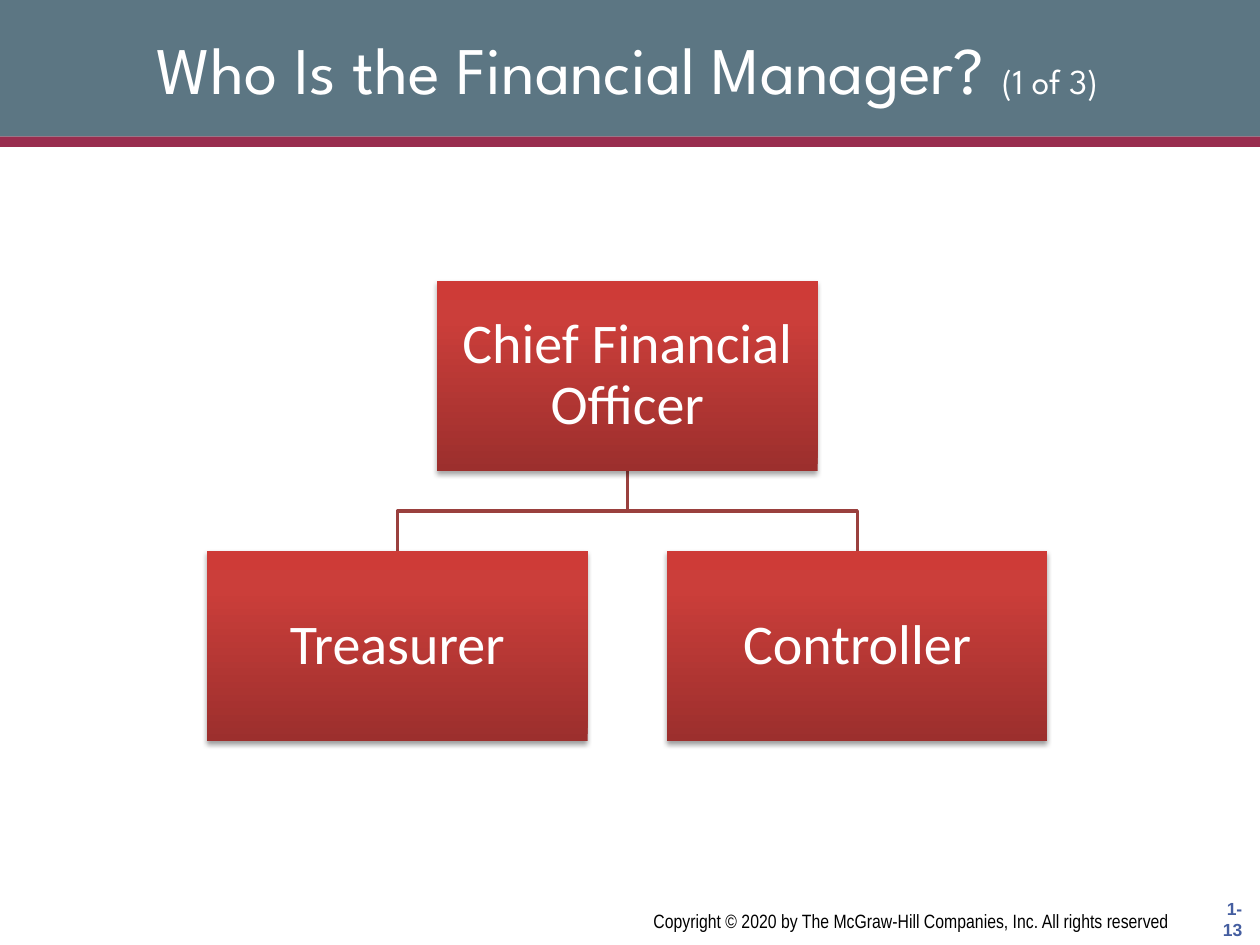
from copy import deepcopy
from dataclasses import dataclass

from lxml.etree import SubElement
from pptx import Presentation
from pptx.dml.color import RGBColor
from pptx.enum.shapes import MSO_SHAPE
from pptx.enum.text import MSO_ANCHOR, MSO_AUTO_SIZE, PP_ALIGN
from pptx.oxml.ns import qn
from pptx.util import Pt

BOX_WIDTH, BOX_HEIGHT = 217.4, 108.7
BOX_GRADIENT = [(0, "9C2F2D"), (0.8, "CB3E3A"), (1, "CE3B37")]


@dataclass
class Role:
    title: str
    center: float
    top: float
    shadow_alpha: int = 38
    shadow_distance: float = 1.6

    @property
    def bottom(self) -> float:
        return self.top + BOX_HEIGHT


def color(hex_code: str) -> RGBColor:
    return RGBColor.from_string(hex_code)


def set_font(font, name: str, size: float, hex_code: str, bold: bool = False) -> None:
    font.name, font.size, font.bold = name, Pt(size), bold
    font.color.rgb = color(hex_code)


def add_rect(slide, left: float, top: float, width: float, height: float):
    rect = slide.shapes.add_shape(
        MSO_SHAPE.RECTANGLE, Pt(left), Pt(top), Pt(width), Pt(height))
    rect.shadow.inherit = False
    rect.line.fill.background()
    return rect


def add_band(slide, top: float, height: float, hex_code: str) -> None:
    band = add_rect(slide, 0, top, 720, height)
    band.fill.solid()
    band.fill.fore_color.rgb = color(hex_code)


def add_footer(slide, text: str, left: float, top: float, width: float, height: float,
               wrap: bool, anchor: MSO_ANCHOR):
    frame = slide.shapes.add_textbox(Pt(left), Pt(top), Pt(width), Pt(height)).text_frame
    frame.word_wrap, frame.vertical_anchor = wrap, anchor
    paragraph = frame.paragraphs[0]
    paragraph.text, paragraph.alignment = text, PP_ALIGN.RIGHT
    return paragraph


def add_gradient(shape) -> None:
    shape.fill.gradient()
    shape.fill.gradient_angle = 90
    stop_list = shape.fill._fill._gradFill.find(qn("a:gsLst"))
    stop_list.append(deepcopy(stop_list[-1]))
    for stop, (position, hex_code) in zip(shape.fill.gradient_stops, BOX_GRADIENT):
        stop.position, stop.color.rgb = position, color(hex_code)


def add_shadow(shape, distance: float, alpha: int) -> None:
    effects = shape._element.spPr.find(qn("a:effectLst"))
    shadow = SubElement(effects, qn("a:outerShdw"), blurRad=str(Pt(3.1)),
                        dist=str(Pt(distance)), dir="5400000", rotWithShape="0")
    black = SubElement(shadow, qn("a:srgbClr"), val="000000")
    SubElement(black, qn("a:alpha"), val=str(alpha * 1000))


def add_role(slide, role: Role) -> None:
    box = add_rect(slide, role.center - BOX_WIDTH / 2, role.top, BOX_WIDTH, BOX_HEIGHT)
    add_gradient(box)
    add_shadow(box, role.shadow_distance, role.shadow_alpha)
    frame = box.text_frame
    frame.margin_left = frame.margin_right = Pt(1.6)
    frame.margin_top = frame.margin_bottom = Pt(1.6)
    frame.word_wrap, frame.vertical_anchor = True, MSO_ANCHOR.MIDDLE
    paragraph = frame.paragraphs[0]
    paragraph.text, paragraph.alignment = role.title, PP_ALIGN.CENTER
    paragraph.line_spacing = 0.9
    set_font(paragraph.font, "Calibri", 32, "FFFFFF")


def add_branch(slide, parent: Role, child: Role) -> None:
    middle = (parent.bottom + child.top) / 2
    builder = slide.shapes.build_freeform(Pt(parent.center), Pt(parent.bottom))
    corners = [(parent.center, middle), (child.center, middle), (child.center, child.top)]
    builder.add_line_segments([(Pt(x), Pt(y)) for x, y in corners], close=False)
    branch = builder.convert_to_shape()
    branch.shadow.inherit = False
    branch.fill.background()
    branch.line.color.rgb, branch.line.width = color("9A403E"), Pt(2)


def add_title(slide) -> None:
    title = slide.shapes.title
    title.left, title.top, title.width, title.height = Pt(18), Pt(5.8), Pt(681), Pt(66)
    frame = title.text_frame
    frame.auto_size, frame.vertical_anchor = MSO_AUTO_SIZE.NONE, MSO_ANCHOR.MIDDLE
    paragraph = frame.paragraphs[0]
    paragraph.alignment = PP_ALIGN.CENTER
    for text, size in [("Who Is the Financial Manager? ", 38), ("(1 of 3)", 20)]:
        run = paragraph.add_run()
        run.text = text
        set_font(run.font, "League Spartan", size, "FFFFFF")
    # Bring the title in front of the header band
    slide.shapes._spTree.append(title._element)


def main() -> None:
    presentation = Presentation()
    presentation.slide_width, presentation.slide_height = Pt(720), Pt(540)
    slide = presentation.slides.add_slide(presentation.slide_layouts[5])

    # Header
    add_band(slide, 78, 6, "992D4F")
    add_band(slide, 0, 78, "5C7683")
    add_title(slide)

    # Footer
    page_number = add_footer(slide, "1- 13", 681, 510, 36, 30, False, MSO_ANCHOR.MIDDLE)
    set_font(page_number.font, "Arial", 10, "455EA0", bold=True)
    rights = add_footer(
        slide, "Copyright © 2020 by The McGraw-Hill Companies, Inc. All rights reserved ",
        257.8, 516, 420, 21, True, MSO_ANCHOR.TOP)
    set_font(rights.font, "Arial Narrow", 11, "000000")

    # Organisation chart
    center, offset = 358.5, 131.4
    officer = Role("Chief Financial Officer", center, 160.5, 35, 1.8)
    reports = [Role("Treasurer", center - offset, 314.8),
               Role("Controller", center + offset, 314.8)]
    for report in reversed(reports):
        add_branch(slide, officer, report)
    for role in [officer, *reports]:
        add_role(slide, role)

    presentation.save("out.pptx")


if __name__ == "__main__":
    main()
